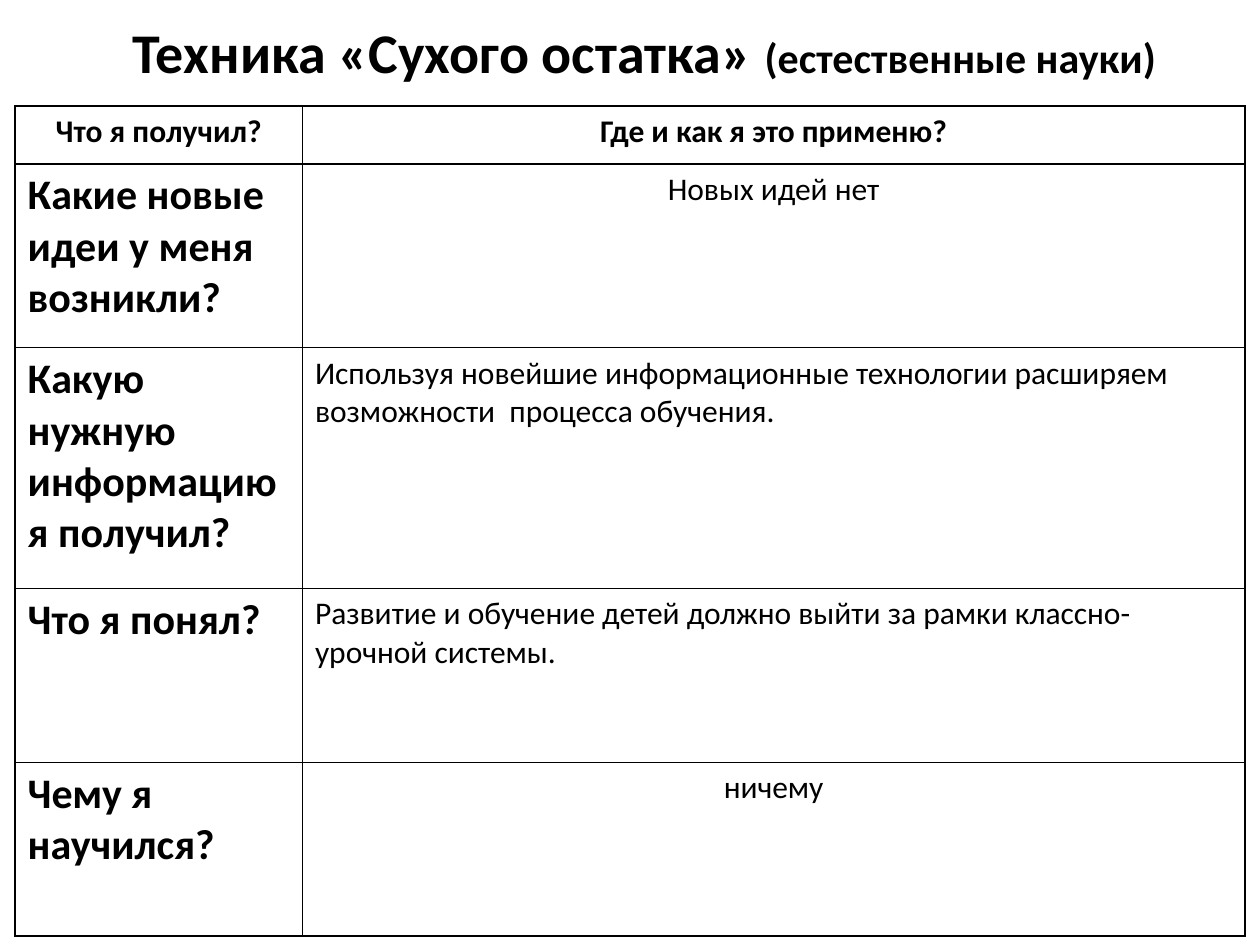
from dataclasses import dataclass

import pptx
import pptx.dml.color
import pptx.enum.text
import pptx.oxml
import pptx.oxml.ns
import pptx.util
from pptx.util import Inches

FONT = "Calibri"
COLORS = {"ink": "000000", "paper": "FFFFFF"}
BORDER_POINTS = 1
LEFT = pptx.enum.text.PP_ALIGN.LEFT
CENTER = pptx.enum.text.PP_ALIGN.CENTER
COLUMN_WIDTHS = (2.28, 7.48)


@dataclass
class Entry:
    text: str
    size: int = 18
    bold: bool = False
    align: pptx.enum.text.PP_ALIGN = LEFT


@dataclass
class Row:
    height: float
    question: Entry
    answer: Entry


def question(text: str) -> Entry:
    return Entry(text, size=24, bold=True)


ROWS = [
    Row(0.46, Entry("Что я получил?", bold=True, align=CENTER),
        Entry("Где и как я это применю?", bold=True, align=CENTER)),
    Row(1.46, question("Какие новые идеи у меня возникли?"),
        Entry("Новых идей нет", align=CENTER)),
    Row(1.91, question("Какую нужную информацию я получил?"),
        Entry("Используя новейшие информационные технологии расширяем "
              "возможности  процесса обучения.")),
    Row(1.38, question("Что я понял?"),
        Entry("Развитие и обучение детей должно выйти за рамки "
              "классно-урочной системы.")),
    Row(1.38, question("Чему я научился?"), Entry("ничему", align=CENTER)),
]


def color(name: str) -> pptx.dml.color.RGBColor:
    return pptx.dml.color.RGBColor.from_string(COLORS[name])


def style_font(font, size: int, bold: bool) -> None:
    font.name = FONT
    font.size = pptx.util.Pt(size)
    font.bold = bold
    font.color.rgb = color("ink")


def add_borders(cell) -> None:
    """Put the four edges ahead of the fill, as the schema requires."""
    properties = cell._tc.get_or_add_tcPr()
    width = pptx.util.Pt(BORDER_POINTS)
    for index, edge in enumerate(("lnL", "lnR", "lnT", "lnB")):
        line = pptx.oxml.parse_xml(
            f'<a:{edge} {pptx.oxml.ns.nsdecls("a")} w="{width}"><a:solidFill>'
            f'<a:srgbClr val="{COLORS["ink"]}"/></a:solidFill></a:{edge}>'
        )
        properties.insert(index, line)


def fill_cell(cell, entry: Entry) -> None:
    cell.fill.solid()
    cell.fill.fore_color.rgb = color("paper")
    add_borders(cell)
    para = cell.text_frame.paragraphs[0]
    para.text = entry.text
    para.alignment = entry.align
    style_font(para.font, entry.size, entry.bold)


def add_title(page) -> None:
    title = page.shapes.title
    title.left, title.top = Inches(0.43), Inches(0.13)
    title.width, title.height = Inches(9.37), Inches(0.55)
    frame = title.text_frame
    frame.word_wrap = True
    frame.auto_size = pptx.enum.text.MSO_AUTO_SIZE.NONE
    frame.vertical_anchor = pptx.enum.text.MSO_ANCHOR.MIDDLE
    para = frame.paragraphs[0]
    para.alignment = CENTER
    for text, size in (("Техника «Сухого остатка» ", 32),
                       ("(естественные науки)", 24)):
        span = para.add_run()
        span.text = text
        style_font(span.font, size, bold=True)


def add_reflection_table(page) -> None:
    table = page.shapes.add_table(
        len(ROWS), len(COLUMN_WIDTHS), Inches(0.12), Inches(0.84),
        Inches(sum(COLUMN_WIDTHS)), Inches(sum(row.height for row in ROWS)),
    ).table
    for column, width in zip(table.columns, COLUMN_WIDTHS):
        column.width = Inches(width)
    for table_row, row in zip(table.rows, ROWS):
        table_row.height = Inches(row.height)
        for cell, entry in zip(table_row.cells, (row.question, row.answer)):
            fill_cell(cell, entry)


def main() -> None:
    deck = pptx.Presentation()
    deck.slide_width, deck.slide_height = Inches(10), Inches(7.5)
    page = deck.slides.add_slide(deck.slide_layouts.get_by_name("Title Only"))
    add_title(page)
    add_reflection_table(page)
    deck.save("out.pptx")


if __name__ == "__main__":
    main()
